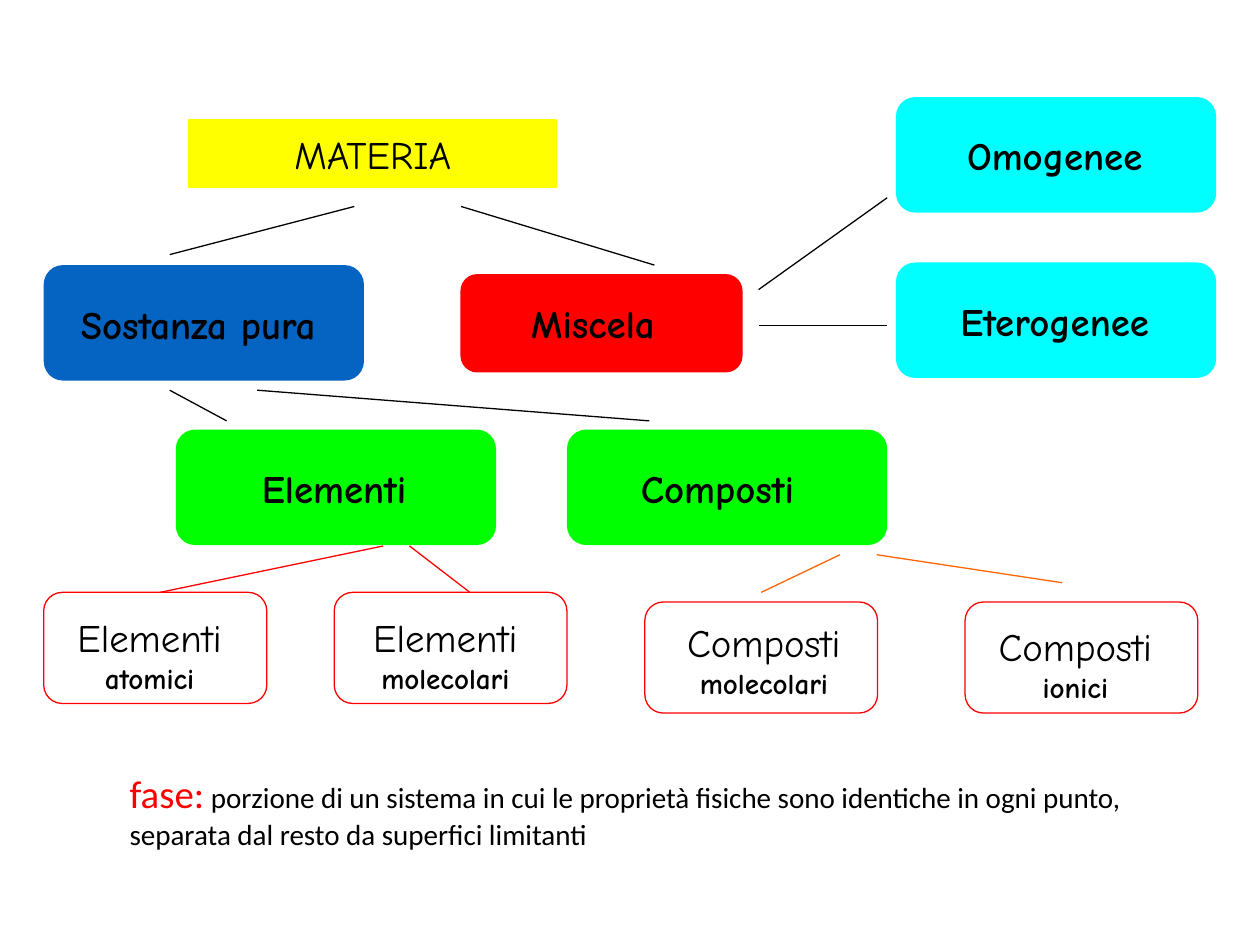
"""Build a concept map that classifies matter, with a definition of phase below."""
from lxml import etree
from pptx import Presentation
from pptx.dml.color import RGBColor
from pptx.enum.shapes import MSO_CONNECTOR, MSO_SHAPE
from pptx.enum.text import MSO_ANCHOR, MSO_AUTO_SIZE, PP_ALIGN
from pptx.oxml.ns import qn
from pptx.util import Pt

STRAIGHT = MSO_CONNECTOR.STRAIGHT
RECT, ROUNDED = MSO_SHAPE.RECTANGLE, MSO_SHAPE.ROUNDED_RECTANGLE
CENTER, LEFT = PP_ALIGN.CENTER, PP_ALIGN.LEFT
MIDDLE = MSO_ANCHOR.MIDDLE
GROW = MSO_AUTO_SIZE.SHAPE_TO_FIT_TEXT

COLORS = {
    "black": "000000", "red": "FF0000", "yellow": "FFFF00", "blue": "0563C1",
    "green": "00FF00", "cyan": "00FFFF", "orange": "FF6600",
}
MAP_FONT, BODY_FONT = "Comic Neue", "Calibri"
LARGE, SMALL, LINE_WIDTH = 22.2, 16.6, 0.75
NODE_W, NODE_H, LEAF_H = 183, 66, 63.5
LABEL_H, LEAF_LABEL_H = 33.8, 54


class ConceptMap:
    """Holds the slide and the style of its elements."""

    def __init__(self, slide):
        self.slide = slide

    def color(self, name):
        return RGBColor.from_string(COLORS[name])

    def font(self, target, size, bold=False, name=MAP_FONT, color="black"):
        target.font.name = name
        target.font.size = Pt(size)
        target.font.bold = bold
        target.font.color.rgb = self.color(color)

    def box(self, left, top, width, height, fill=None, outline=None, kind=ROUNDED):
        shape = self.slide.shapes.add_shape(kind, Pt(left), Pt(top), Pt(width), Pt(height))
        shape.shadow.inherit = False
        if fill:
            shape.fill.solid()
            shape.fill.fore_color.rgb = self.color(fill)
        else:
            shape.fill.background()
        if outline:
            shape.line.color.rgb = self.color(outline)
            shape.line.width = Pt(LINE_WIDTH)
        else:
            shape.line.fill.background()
        return shape

    def heading(self, text, left, top, width, height, fill):
        frame = self.box(left, top, width, height, fill, fill, RECT).text_frame
        frame.word_wrap = False
        frame.vertical_anchor = MIDDLE
        paragraph = frame.paragraphs[0]
        paragraph.text = text
        paragraph.alignment = CENTER
        self.font(paragraph, LARGE)

    def text_frame(self, left, top, width, height, wrap=False):
        label = self.slide.shapes.add_textbox(Pt(left), Pt(top), Pt(width), Pt(height))
        label.text_frame.word_wrap = wrap
        label.text_frame.auto_size = GROW
        return label.text_frame

    def label(self, text, left, top, width, align=CENTER):
        paragraph = self.text_frame(left, top, width, LABEL_H).paragraphs[0]
        paragraph.text = text
        paragraph.alignment = align
        self.font(paragraph, LARGE, bold=True)

    def leaf_label(self, family, kind, left, top, width):
        frame = self.text_frame(left, top, width, LEAF_LABEL_H)
        frame.text = f"{family}\n{kind}"
        for paragraph, size, bold in zip(frame.paragraphs, (LARGE, SMALL), (False, True)):
            paragraph.alignment = CENTER
            self.font(paragraph, size, bold)

    def definition(self, term, meaning, left, top, width, height):
        paragraph = self.text_frame(left, top, width, height, wrap=True).paragraphs[0]
        for text, size, color in ((term, LARGE, "red"), (meaning, SMALL, "black")):
            run = paragraph.add_run()
            run.text = text
            self.font(run, size, name=BODY_FONT, color=color)

    def branch(self, x1, y1, x2, y2, color):
        line = self.slide.shapes.add_connector(STRAIGHT, Pt(x1), Pt(y1), Pt(x2), Pt(y2))
        line.line.color.rgb = self.color(color)
        line.line.width = Pt(LINE_WIDTH)
        etree.SubElement(line._element.spPr, qn("a:effectLst"))


def main():
    deck = Presentation()
    deck.slide_width, deck.slide_height = Pt(720), Pt(540)
    concept = ConceptMap(deck.slides.add_slide(deck.slide_layouts[6]))

    concept.box(263.5, 157, 160.5, 55.5, "red", "red")
    concept.label("Miscela", 296.5, 167.5, 94, LEFT)
    concept.heading("MATERIA", 108, 68.5, 210, 38.5, "yellow")

    nodes = [
        ("Sostanza pura", 25, 151.5, "blue", 29, 168.5),
        ("Elementi", 100.5, 245.5, "green", 138, 106),
        ("Composti", 324, 245.5, "green", 355.5, 109),
        ("Omogenee", 512, 55.5, "cyan", 541.5, 122.5),
        ("Eterogenee", 512, 150, "cyan", 535, 135.5),
    ]
    for text, left, top, fill, label_left, label_width in nodes:
        concept.box(left, top, NODE_W, NODE_H, fill)
        concept.label(text, label_left, top + 16.5, label_width)

    leaves = [
        ("Elementi", "atomici", 25, 338.5, 127.5, 33, 347, 105),
        ("Elementi", "molecolari", 191, 338.5, 133, 202, 347, 105),
        ("Composti", "molecolari", 368.5, 344, 133, 382, 350, 109),
        ("Composti", "ionici", 551.5, 344, 133, 560, 352.5, 109),
    ]
    for family, kind, left, top, width, label_left, label_top, label_width in leaves:
        concept.leaf_label(family, kind, label_left, label_top, label_width)
        concept.box(left, top, width, LEAF_H, outline="red")

    branches = {
        "black": [
            (202.5, 118, 97, 145.5), (263.5, 118, 374, 151.5),
            (129.5, 240.5, 97, 223), (147, 223, 371, 240.5),
            (433.5, 165.5, 507, 113), (433.5, 186.2, 507, 186.2),
        ],
        "red": [(219, 312, 91.5, 338.5), (234, 312, 268.5, 338.5)],
        "orange": [(480, 317, 435, 338.5), (501, 317, 607, 333)],
    }
    for color, lines in branches.items():
        for ends in lines:
            concept.branch(*ends, color)

    concept.definition(
        "fase:",
        " porzione di un sistema in cui le proprietà fisiche sono identiche in ogni punto, "
        "separata dal resto da superfici limitanti",
        67, 436.5, 602, 54,
    )
    deck.save("out.pptx")


if __name__ == "__main__":
    main()
